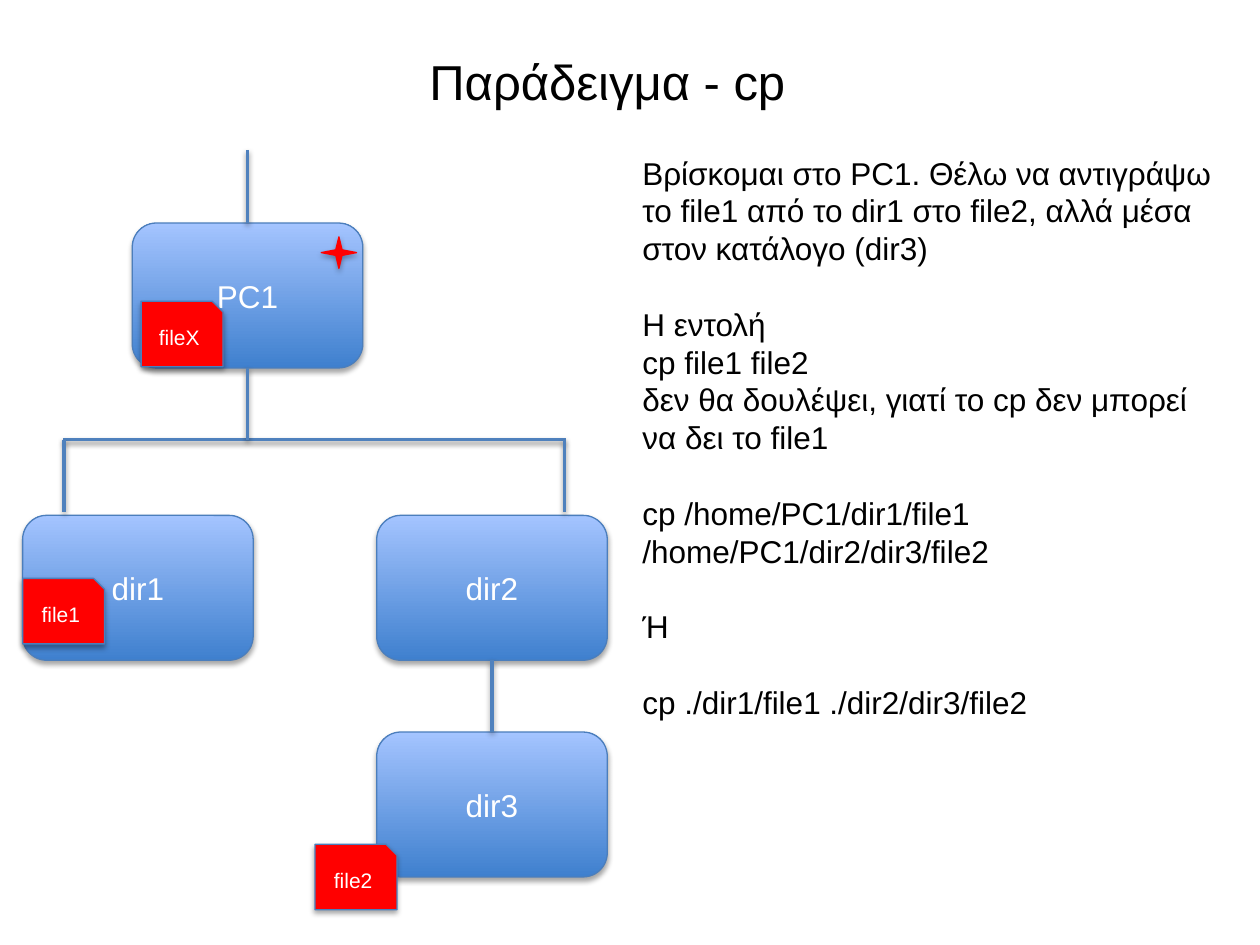
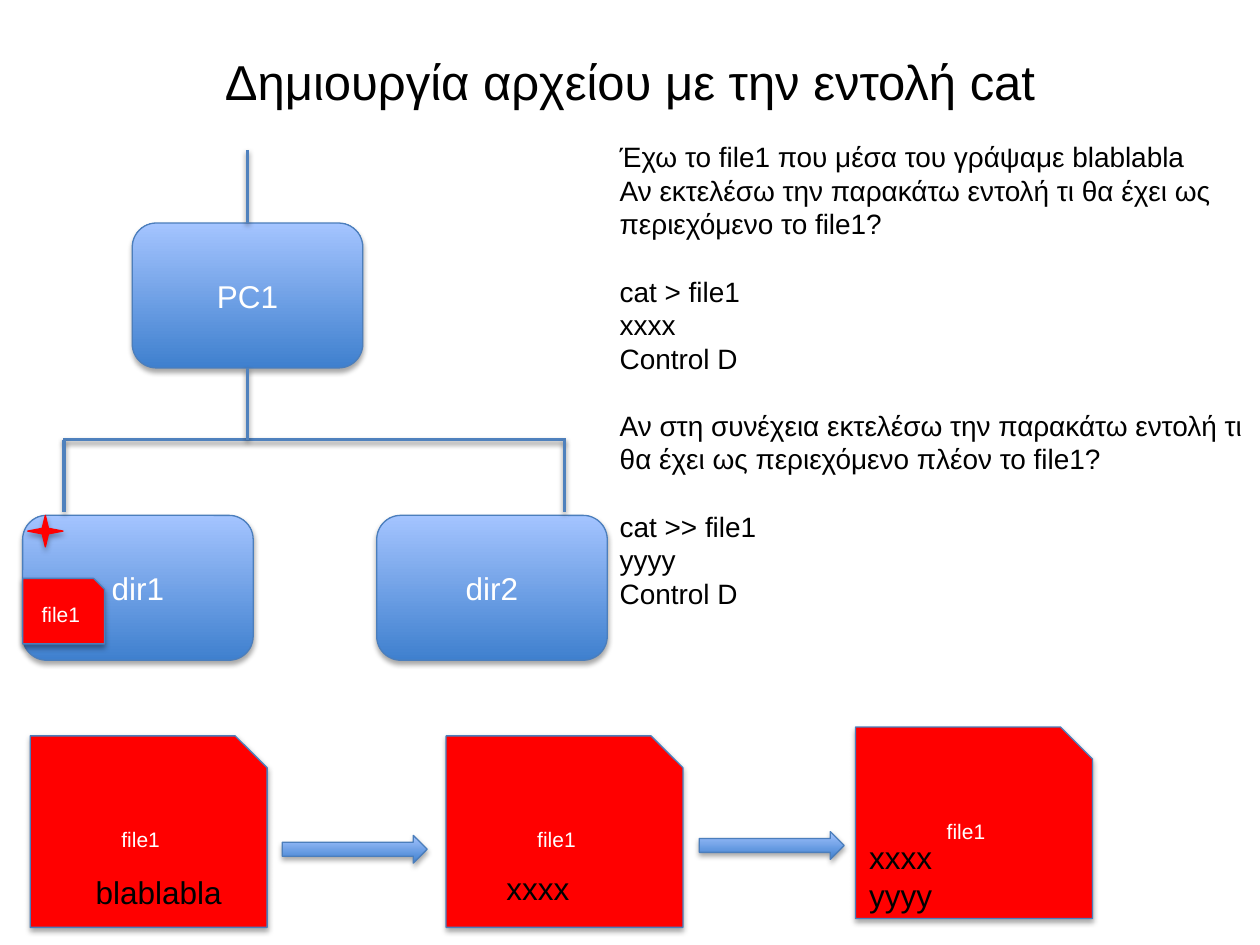
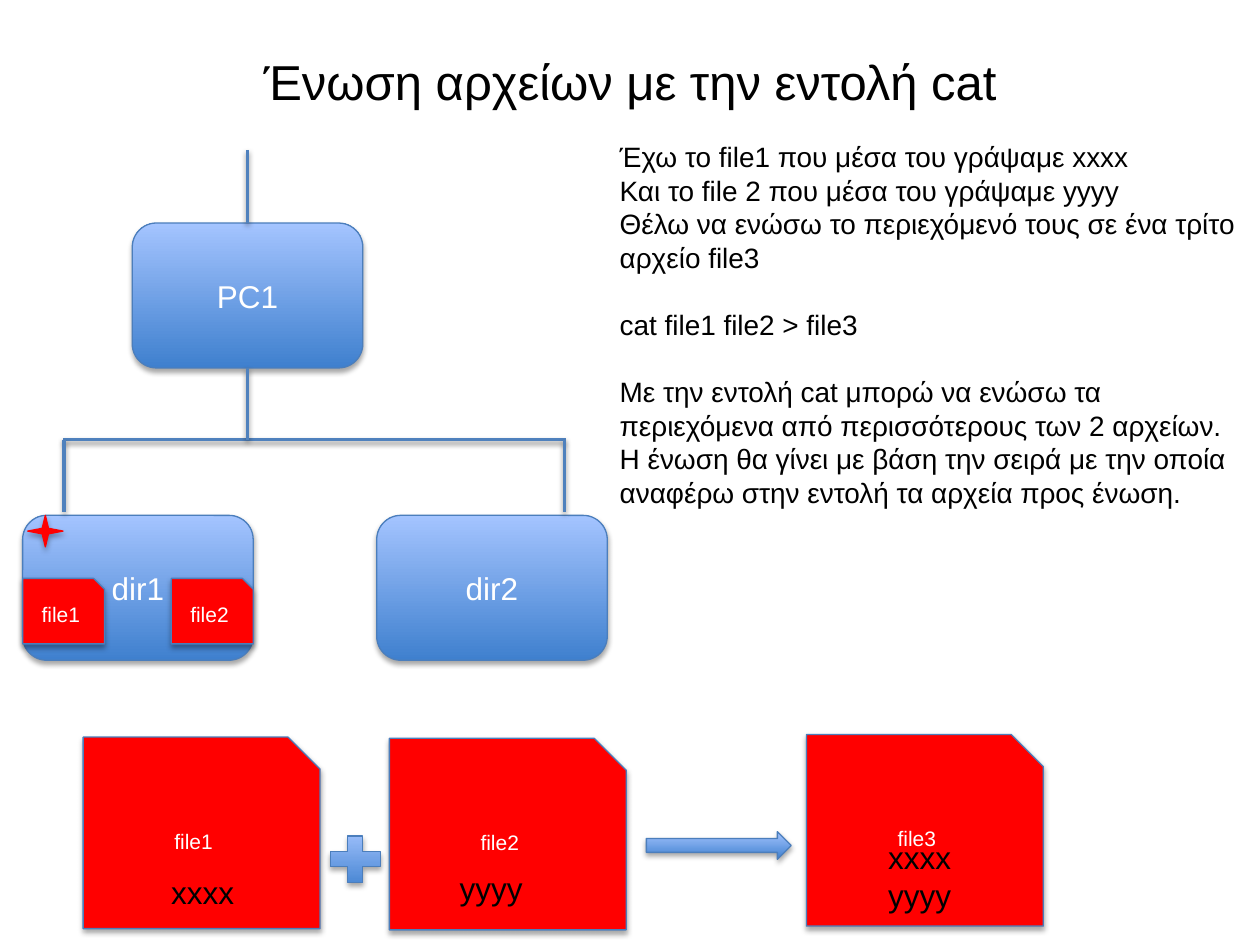
from lxml.etree import SubElement
from pptx import Presentation
from pptx.dml.color import RGBColor
from pptx.enum.shapes import MSO_CONNECTOR, MSO_SHAPE
from pptx.enum.text import MSO_ANCHOR, PP_ALIGN
from pptx.oxml.ns import qn
from pptx.util import Inches, Pt

SLIDE_WIDTH, SLIDE_HEIGHT = Inches(10), Inches(7.5)
COLUMNS = 10
CELL = SLIDE_WIDTH // COLUMNS

BLACK = RGBColor(0x00, 0x00, 0x00)
WHITE = RGBColor(0xFF, 0xFF, 0xFF)
RED = RGBColor(0xFF, 0x00, 0x00)
DEEP_BLUE = RGBColor(0x3F, 0x80, 0xCE)
PALE_BLUE = RGBColor(0xA4, 0xC4, 0xFF)
EDGE_BLUE = RGBColor(0x4B, 0x7E, 0xBC)
BRANCH_BLUE = RGBColor(0x4F, 0x81, 0xBD)

FONT = "Arial"
LINE_HEIGHT = 1.2
FOLDER_SIZE = (1.83, 1.15)
SMALL_FILE = (0.65, 0.52)
LARGE_FILE = (1.88, 1.52)
STAR_SIZE = (0.28, 0.25)
ARROW_SIZE = (1.15, 0.22)
PLUS_SIZE = (0.54, 0.5)
STEP = 0.57
BUS_ROW = 3.49
FOLDER_ROW = 4.09
FILE_ROW = 4.59
DIR1_COLUMN, DIR2_COLUMN = 0.18, 2.99
TOP, BOTTOM = 0, 2


def grid(*cells):
    """Turn columns and rows into slide lengths."""
    return [round(cell * CELL) for cell in cells]


def style_text(paragraph, text, size, color, align=PP_ALIGN.LEFT):
    """Write one paragraph in the shared font."""
    paragraph.text = text
    paragraph.alignment = align
    paragraph.font.name = FONT
    paragraph.font.size = Pt(size)
    paragraph.font.color.rgb = color


def add_shadow(item, opacity, distance):
    """Give a shape or connector a soft shadow below it."""
    effects = SubElement(item.element.spPr, qn("a:effectLst"))
    shadow = SubElement(effects, qn("a:outerShdw"), blurRad=str(Pt(3.1)),
                        dist=str(Pt(distance)), dir="5400000", rotWithShape="0")
    color = SubElement(shadow, qn("a:srgbClr"), val=str(BLACK))
    SubElement(color, qn("a:alpha"), val=str(opacity * 1000))


def add_box(slide, kind, position, size, fill=None, edge=EDGE_BLUE, label="", label_size=18):
    """Add a preset shape, shaded blue unless a fill is given."""
    box = slide.shapes.add_shape(kind, *grid(*position, *size))
    if fill is None:
        box.fill.gradient()
        box.fill.gradient_angle = 90
        for stop, color in zip(box.fill.gradient_stops, (DEEP_BLUE, PALE_BLUE)):
            stop.color.rgb = color
    else:
        box.fill.solid()
        box.fill.fore_color.rgb = fill
    box.line.color.rgb = edge
    box.line.width = Pt(0.75)
    add_shadow(box, 35, 1.8)
    if label:
        box.text_frame.vertical_anchor = MSO_ANCHOR.MIDDLE
        style_text(box.text_frame.paragraphs[0], label, label_size, WHITE, PP_ALIGN.CENTER)
    return box


def add_folder(slide, name, position):
    """Add a directory box."""
    return add_box(slide, MSO_SHAPE.ROUNDED_RECTANGLE, position, FOLDER_SIZE, label=name)


def add_file(slide, name, position, size=SMALL_FILE):
    """Add a red file with a snipped corner."""
    add_box(slide, MSO_SHAPE.SNIP_1_RECTANGLE, position, size, RED, label=name, label_size=12)


def add_star(slide, position):
    """Mark the current directory."""
    add_box(slide, MSO_SHAPE.STAR_4_POINT, position, STAR_SIZE, RED, RED)


def add_arrow(slide, position):
    """Add a block arrow between two file states."""
    add_box(slide, MSO_SHAPE.RIGHT_ARROW, position, ARROW_SIZE)


def add_branch(slide, start, end, parent=None, child=None):
    """Add a tree line, joined to its parent and child where given."""
    branch = slide.shapes.add_connector(MSO_CONNECTOR.STRAIGHT, *grid(*start, *end))
    if parent is not None:
        branch.begin_connect(parent, BOTTOM)
    if child is not None:
        branch.end_connect(child, TOP)
    branch.line.color.rgb = BRANCH_BLUE
    branch.line.width = Pt(2)
    add_shadow(branch, 38, 1.6)


def add_title(slide, text, column=0.5, width=9):
    """Add the centred slide title."""
    frame = slide.shapes.add_textbox(*grid(column, 0.3, width, 0.68)).text_frame
    frame.word_wrap = True
    frame.vertical_anchor = MSO_ANCHOR.MIDDLE
    style_text(frame.paragraphs[0], text, 28, BLACK, PP_ALIGN.CENTER)


def add_text(slide, groups, position, size, points=18, wrap=True):
    """Add groups of paragraphs set one line apart."""
    frame = slide.shapes.add_textbox(*grid(*position, *size)).text_frame
    frame.word_wrap = wrap
    line = Pt(points * LINE_HEIGHT)
    paragraph = frame.paragraphs[0]
    for group_index, group in enumerate(groups):
        for index, text in enumerate(group):
            if group_index or index:
                paragraph = frame.add_paragraph()
            style_text(paragraph, text, points, BLACK)
            paragraph.line_spacing = line
            if group_index and index == 0:
                paragraph.space_before = line


def add_content(slide, lines, position):
    """Show what is stored in a file."""
    size = (0.14 * max(map(len, lines)) + 0.15, 0.1 + 0.3 * len(lines))
    add_text(slide, [lines], position, size, wrap=False)


def add_tree(slide):
    """Add PC1 with its two directories and return dir2."""
    home = add_folder(slide, "PC1", (1.05, 1.77))
    center = 1.05 + FOLDER_SIZE[0] / 2
    add_branch(slide, (0.5, BUS_ROW), (4.49, BUS_ROW))
    add_branch(slide, (center, BUS_ROW - STEP), (center, BUS_ROW), parent=home)
    add_branch(slide, (center, 1.19), (center, 1.77), child=home)
    add_folder(slide, "dir1", (DIR1_COLUMN, FOLDER_ROW))
    dir2 = add_folder(slide, "dir2", (DIR2_COLUMN, FOLDER_ROW))
    for column in (0.51, 4.48):
        add_branch(slide, (column, BUS_ROW), (column, BUS_ROW + STEP))
    add_file(slide, "file1", (DIR1_COLUMN, FILE_ROW))
    return dir2


def build_copy(slide):
    """Show copying between directories."""
    add_title(slide, "Παράδειγμα - cp", 2.55, 4.54)
    dir2 = add_tree(slide)
    add_text(slide, [
        ["Βρίσκομαι στο PC1. Θέλω να αντιγράψω το file1 από το dir1 στο file2, "
         "αλλά μέσα στον κατάλογο (dir3)"],
        ["Η εντολή", "cp file1 file2",
         "δεν θα δουλέψει, γιατί το cp δεν μπορεί να δει το file1"],
        ["cp /home/PC1/dir1/file1 /home/PC1/dir2/dir3/file2"],
        ["Ή"],
        ["cp ./dir1/file1 ./dir2/dir3/file2"],
    ], (5, 1.17), (4.83, 4.95))
    add_star(slide, (2.55, 1.88))
    add_file(slide, "fileΧ", (1.12, 2.39))
    dir3 = add_folder(slide, "dir3", (DIR2_COLUMN, 5.81))
    add_branch(slide, (3.9, 5.24), (3.9, 5.81), dir2, dir3)
    add_file(slide, "file2", (2.5, 6.7))


def build_create(slide):
    """Show overwriting and appending with cat."""
    add_title(slide, "Δημιουργία αρχείου με την εντολή cat")
    add_tree(slide)
    add_text(slide, [
        ["Έχω το file1 που μέσα του γράψαμε blablabla",
         "Αν εκτελέσω την παρακάτω εντολή τι θα έχει ως περιεχόμενο το file1?"],
        ["cat > file1", "xxxx", "Control D"],
        ["Αν στη συνέχεια εκτελέσω την παρακάτω εντολή τι θα έχει ως "
         "περιεχόμενο πλέον το file1?"],
        ["cat >> file1", "yyyy", "Control D"],
    ], (4.82, 1.06), (5.18, 4.41), 16)
    add_star(slide, (0.22, FOLDER_ROW))
    for position in ((0.24, 5.84), (3.54, 5.84), (6.79, 5.77)):
        add_file(slide, "file1", position, LARGE_FILE)
    add_content(slide, ["blablabla"], (0.66, 6.88))
    add_content(slide, ["xxxx"], (3.92, 6.85))
    add_content(slide, ["xxxx", "yyyy"], (6.8, 6.6))
    add_arrow(slide, (2.24, 6.63))
    add_arrow(slide, (5.55, 6.6))


def build_join(slide):
    """Show joining two files with cat."""
    add_title(slide, "Ένωση αρχείων με την εντολή cat")
    add_tree(slide)
    add_text(slide, [
        ["Έχω το file1 που μέσα του γράψαμε xxxx",
         "Και το file 2 που μέσα του γράψαμε yyyy",
         "Θέλω να ενώσω το περιεχόμενό τους σε ένα τρίτο αρχείο file3"],
        ["cat file1 file2 > file3"],
        ["Με την εντολή cat μπορώ να ενώσω τα περιεχόμενα από περισσότερους "
         "των 2 αρχείων.",
         "Η ένωση θα γίνει με βάση την σειρά με την οποία αναφέρω στην εντολή "
         "τα αρχεία προς ένωση."],
    ], (4.82, 1.06), (5.18, 3.6), 16)
    add_star(slide, (0.22, FOLDER_ROW))
    add_file(slide, "file2", (1.36, FILE_ROW))
    for name, position in (("file1", (0.66, 5.85)), ("file2", (3.09, 5.86)),
                           ("file3", (6.4, 5.83))):
        add_file(slide, name, position, LARGE_FILE)
    add_content(slide, ["xxxx"], (1.26, 6.88))
    add_content(slide, ["yyyy"], (3.55, 6.85))
    add_content(slide, ["xxxx", "yyyy"], (6.95, 6.6))
    add_arrow(slide, (5.13, 6.6))
    add_box(slide, MSO_SHAPE.MATH_PLUS, (2.55, 6.57), PLUS_SIZE)


def main():
    """Build the three slides and save them."""
    deck = Presentation()
    deck.slide_width, deck.slide_height = SLIDE_WIDTH, SLIDE_HEIGHT
    blank = deck.slide_layouts[6]
    for build in (build_copy, build_create, build_join):
        build(deck.slides.add_slide(blank))
    deck.save("out.pptx")


if __name__ == "__main__":
    main()
